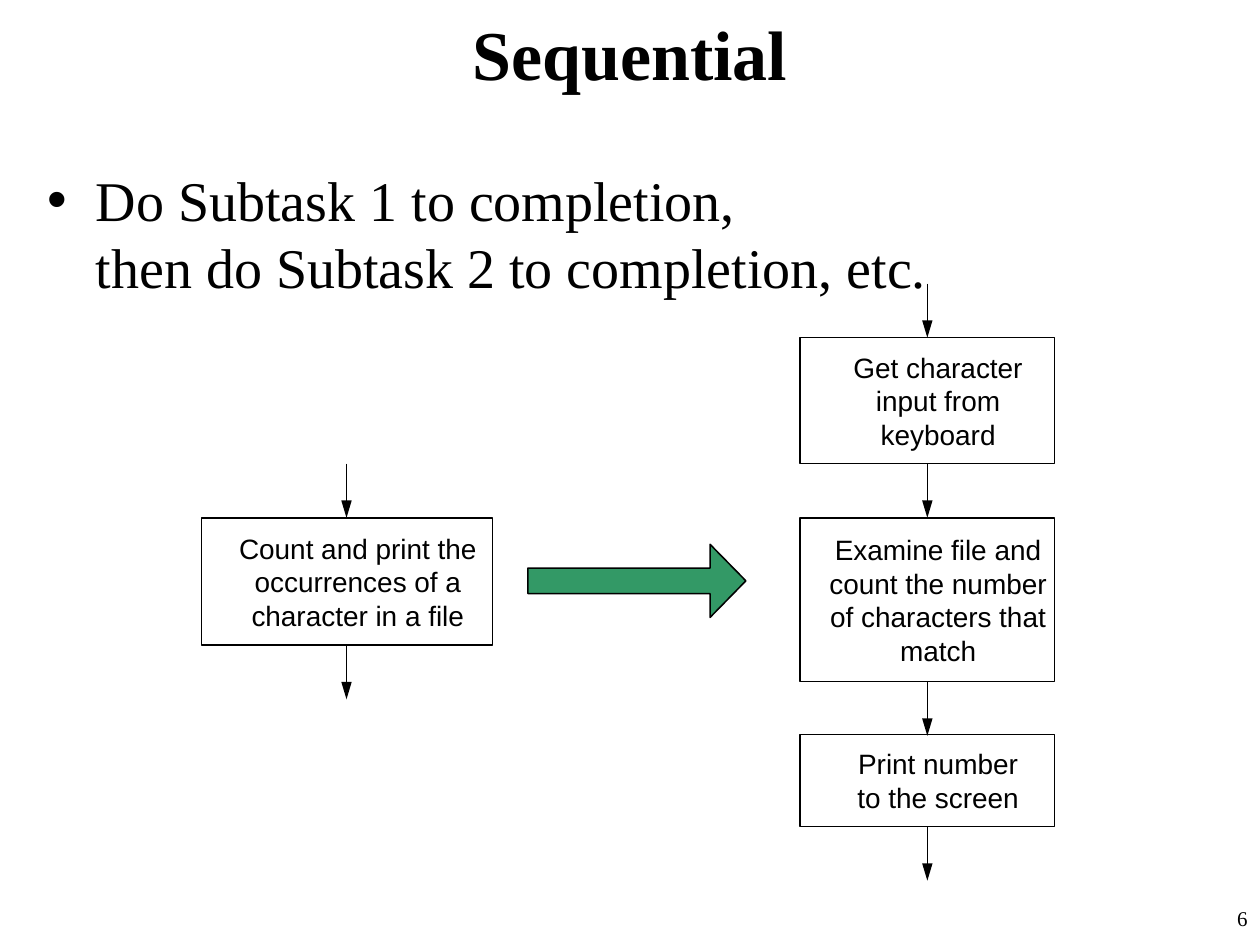
from dataclasses import dataclass

from lxml.etree import SubElement
from pptx import Presentation
from pptx.dml.color import RGBColor
from pptx.enum.shapes import MSO_CONNECTOR, MSO_SHAPE
from pptx.enum.text import MSO_ANCHOR, MSO_AUTO_SIZE, PP_ALIGN
from pptx.oxml.ns import qn
from pptx.util import Inches, Pt


@dataclass(frozen=True)
class Theme:
    black: RGBColor = RGBColor(0, 0, 0)
    white: RGBColor = RGBColor(255, 255, 255)
    green: RGBColor = RGBColor(0x33, 0x99, 0x66)
    serif: str = "Times New Roman"
    sans: str = "Arial"
    title: Pt = Pt(40)
    body: Pt = Pt(32)
    box: Pt = Pt(16)
    number: Pt = Pt(12)
    line: Pt = Pt(0.88)


T = Theme()


def add_lines(p, lines, font, size, bold=False):
    """Write one run per line, with line breaks between them."""
    for i, line in enumerate(lines):
        if i:
            p.add_line_break()
        r = p.add_run()
        r.text = line
        r.font.name, r.font.size, r.font.bold = font, size, bold
        r.font.color.rgb = T.black


def style_shape(sp, fill):
    sp.shadow.inherit = False
    sp.fill.solid()
    sp.fill.fore_color.rgb = fill
    sp.line.color.rgb = T.black
    sp.line.width = T.line


prs = Presentation()
prs.slide_width, prs.slide_height = Inches(10), Inches(7.5)
s = prs.slides.add_slide(prs.slide_layouts[1])

# Title
title = s.shapes.title
title.left, title.top = Inches(0), Inches(0)
title.width, title.height = Inches(10), Inches(0.84)
tf = title.text_frame
tf.auto_size = MSO_AUTO_SIZE.NONE
tf.vertical_anchor = MSO_ANCHOR.MIDDLE
p = tf.paragraphs[0]
p.alignment = PP_ALIGN.CENTER
add_lines(p, ["Sequential"], T.serif, T.title, bold=True)

# Bulleted statement
body = s.placeholders[1]
body.left, body.top = Inches(0.28), Inches(1.07)
body.width, body.height = Inches(9.45), Inches(6.06)
tf = body.text_frame
tf.auto_size = MSO_AUTO_SIZE.NONE
tf.margin_top = Inches(0.25)
p = tf.paragraphs[0]
p.space_before = Pt(0)
p.line_spacing = Pt(38)
add_lines(p, ["Do Subtask 1 to completion,", "then do Subtask 2 to completion, etc."],
          T.serif, T.body)
pPr = p._p.get_or_add_pPr()
pPr.set("marL", str(Inches(0.38)))
pPr.set("indent", str(-Inches(0.38)))
SubElement(pPr, qn("a:buChar")).set("char", "•")

# Slide number
number = s.shapes.add_textbox(Inches(7.92), Inches(7.14), Inches(2.08), Inches(0.36))
tf = number.text_frame
tf.word_wrap = True
p = tf.paragraphs[0]
p.alignment = PP_ALIGN.RIGHT
add_lines(p, ["6"], T.serif, T.number)

# Arrow from the whole task to its subtasks
refine = s.shapes.add_shape(MSO_SHAPE.RIGHT_ARROW, Inches(4.19), Inches(4.32),
                            Inches(1.73), Inches(0.58))
refine.adjustments[0], refine.adjustments[1] = 0.35, 0.49
style_shape(refine, T.green)

# Process boxes: left, top, width, height, lines
boxes = [
    (1.6, 4.11, 2.31, 1.01,
     ["Count and print the", "occurrences of a", "character in a file"]),
    (6.35, 2.68, 2.02, 1, ["Get character", "input from", "keyboard"]),
    (6.35, 4.11, 2.02, 1.3,
     ["Examine file and", "count the number", "of characters that", "match"]),
    (6.35, 5.83, 2.02, 0.73, ["Print number", "to the screen"]),
]
for left, top, width, height, lines in boxes:
    sp = s.shapes.add_shape(MSO_SHAPE.RECTANGLE, Inches(left), Inches(top),
                            Inches(width), Inches(height))
    style_shape(sp, T.white)
    tf = sp.text_frame
    tf.word_wrap = True
    tf.vertical_anchor = MSO_ANCHOR.MIDDLE
    tf.margin_left = Inches(0.17)
    tf.margin_right = tf.margin_top = tf.margin_bottom = Inches(0)
    p = tf.paragraphs[0]
    p.alignment = PP_ALIGN.CENTER
    p.line_spacing = Pt(19.2)
    add_lines(p, lines, T.sans, T.box)

# Flow arrows, all of one length: centre, start
flow_length = 0.43
flows = [(2.75, 3.68), (2.75, 5.12), (7.36, 2.25), (7.36, 3.68), (7.36, 5.41), (7.36, 6.56)]
for x, y in flows:
    flow = s.shapes.add_connector(MSO_CONNECTOR.STRAIGHT, Inches(x), Inches(y),
                                  Inches(x), Inches(y + flow_length))
    flow.line.color.rgb = T.black
    flow.line.width = T.line
    head = SubElement(flow.line._get_or_add_ln(), qn("a:tailEnd"))
    head.set("type", "triangle")
    head.set("w", "med")
    head.set("len", "lg")
    SubElement(flow._element.spPr, qn("a:effectLst"))

prs.save("out.pptx")
